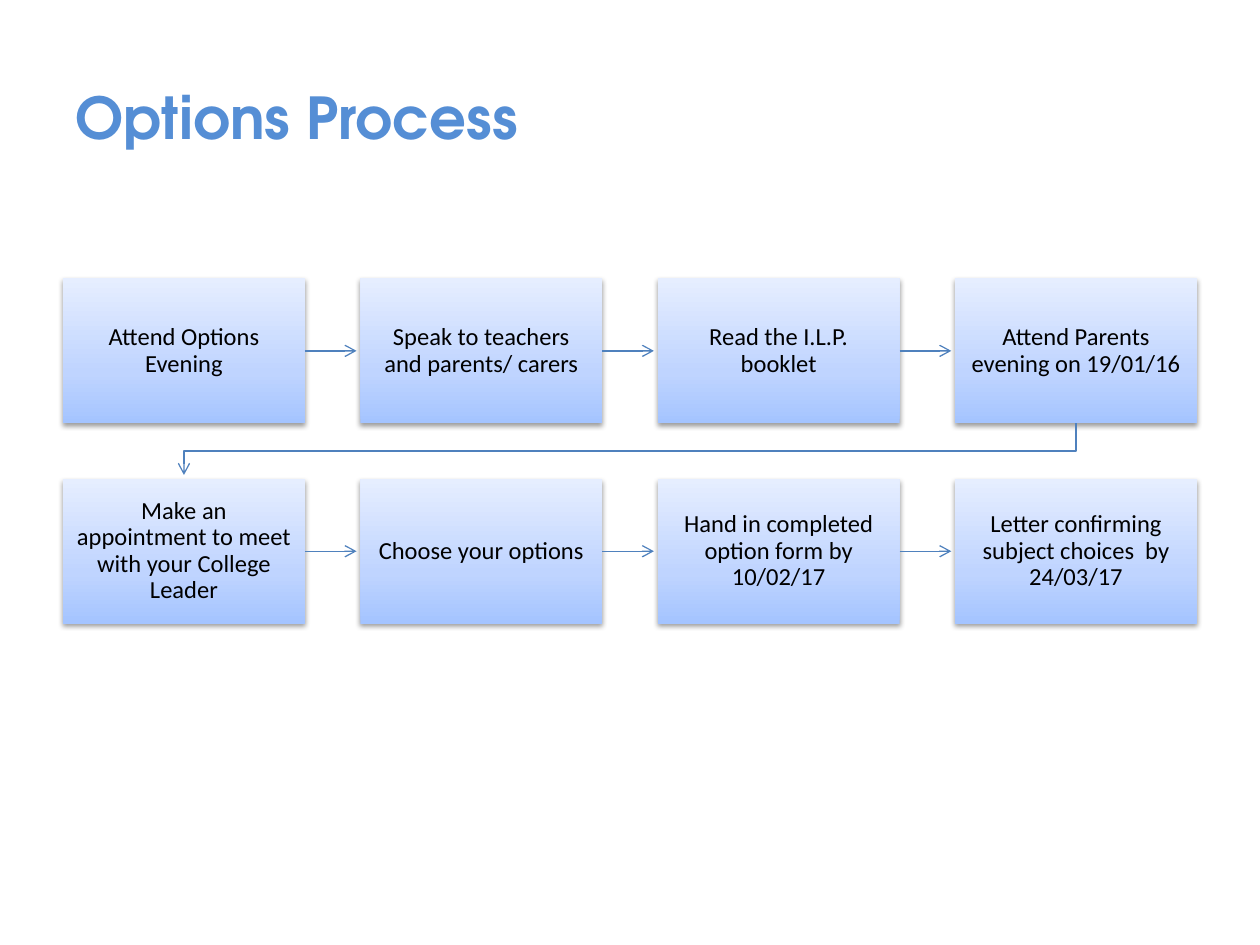
from copy import deepcopy
from typing import NamedTuple

from lxml.etree import SubElement
from pptx import Presentation
from pptx.dml.color import RGBColor
from pptx.enum.shapes import MSO_CONNECTOR as CONN, MSO_SHAPE as SHAPE
from pptx.enum.text import MSO_ANCHOR as ANCHOR, PP_ALIGN as ALIGN
from pptx.oxml.ns import qn
from pptx.util import Inches, Pt

COLORS = {
    "title": "558ED5", "text": "000000", "line": "4F81BD", "shadow": "000000",
    "bottom": "A4C4FF", "middle": "BFD4FF", "top": "E6EEFF",
}
GRADIENT = ((0, "bottom"), (0.35, "middle"), (1, "top"))
COLS = 4
LEFT, TOP = 0.5, 2.21
BOX_W, BOX_H = 1.92, 1.15
PITCH_X, PITCH_Y = 2.36, 1.59
ARROW_GAP = 0.03
INSET = 0.11


class Step(NamedTuple):
    text: str
    row: int
    col: int

    @property
    def x(self) -> float:
        return LEFT + self.col * PITCH_X

    @property
    def y(self) -> float:
        return TOP + self.row * PITCH_Y


LABELS = (
    "Attend Options Evening",
    "Speak to teachers and parents/ carers",
    "Read the I.L.P. booklet",
    "Attend Parents evening on 19/01/16",
    "Make an appointment to meet with your College Leader",
    "Choose your options",
    "Hand in completed option form by 10/02/17",
    "Letter confirming subject choices  by 24/03/17",
)
STEPS = [Step(text, *divmod(i, COLS)) for i, text in enumerate(LABELS)]


def rgb(name: str) -> RGBColor:
    return RGBColor.from_string(COLORS[name])


def add_title(s, text: str) -> None:
    tf = s.shapes.add_textbox(Inches(0.5), Inches(0.3), Inches(9), Inches(1.25)).text_frame
    tf.word_wrap = True
    tf.vertical_anchor = ANCHOR.MIDDLE
    p = tf.paragraphs[0]
    p.text = text
    p.font.name, p.font.size, p.font.bold = "TeX Gyre Adventor", Pt(33), True
    p.font.color.rgb = rgb("title")


def fill_gradient(sp) -> None:
    sp.fill.gradient()
    sp.fill.gradient_angle = 90
    stop_list = sp._element.spPr.find(qn("a:gradFill")).find(qn("a:gsLst"))
    stop_list.append(deepcopy(stop_list[0]))
    for stop, (position, color) in zip(sp.fill.gradient_stops, GRADIENT):
        stop.position = position
        stop.color.rgb = rgb(color)


def add_shadow(sp) -> None:
    sp.shadow.inherit = False
    effects = sp._element.spPr.find(qn("a:effectLst"))
    shadow = SubElement(effects, qn("a:outerShdw"), blurRad=str(Pt(3.1)),
                        dist=str(Pt(1.6)), dir="5400000", rotWithShape="0")
    color = SubElement(shadow, qn("a:srgbClr"), val=COLORS["shadow"])
    SubElement(color, qn("a:alpha"), val="38000")


def add_box(s, step: Step):
    sp = s.shapes.add_shape(SHAPE.RECTANGLE, Inches(step.x), Inches(step.y),
                            Inches(BOX_W), Inches(BOX_H))
    fill_gradient(sp)
    sp.line.fill.background()
    add_shadow(sp)
    tf = sp.text_frame
    tf.word_wrap = True
    tf.vertical_anchor = ANCHOR.MIDDLE
    tf.margin_left = tf.margin_right = tf.margin_top = tf.margin_bottom = Inches(INSET)
    p = tf.paragraphs[0]
    p.text = step.text
    p.alignment, p.line_spacing = ALIGN.CENTER, 0.9
    p.font.name, p.font.size = "Calibri", Pt(14)
    p.font.color.rgb = rgb("text")
    return sp


def style_arrow(sp) -> None:
    sp.line.color.rgb = rgb("line")
    sp.line.width = Pt(0.75)
    spPr = sp._element.spPr
    SubElement(spPr.find(qn("a:ln")), qn("a:tailEnd"), type="arrow")
    SubElement(spPr, qn("a:effectLst"))


def add_straight_arrow(s, start: Step, end: Step, box) -> None:
    y = Inches(start.y + BOX_H / 2)
    sp = s.shapes.add_connector(CONN.STRAIGHT, Inches(start.x + BOX_W), y,
                                Inches(end.x - ARROW_GAP), y)
    sp.begin_connect(box, 3)
    style_arrow(sp)


def add_return_arrow(s, start: Step, end: Step) -> None:
    x1, x2 = (Inches(step.x + BOX_W / 2) for step in (start, end))
    y1, y2 = Inches(start.y + BOX_H), Inches(end.y - ARROW_GAP)
    middle = Inches((start.y + BOX_H + end.y) / 2)
    path = s.shapes.build_freeform(x1, y1)
    path.add_line_segments([(x1, middle), (x2, middle), (x2, y2)], close=False)
    sp = path.convert_to_shape()
    sp.fill.background()
    style_arrow(sp)


def main() -> None:
    prs = Presentation()
    prs.slide_width, prs.slide_height = Inches(10), Inches(7.5)
    s = prs.slides.add_slide(prs.slide_layouts[6])
    add_title(s, "Options Process")
    boxes = [add_box(s, step) for step in STEPS]
    for start, end, box in zip(STEPS, STEPS[1:], boxes):
        if start.row == end.row:
            add_straight_arrow(s, start, end, box)
        else:
            add_return_arrow(s, start, end)
    prs.save("out.pptx")


if __name__ == "__main__":
    main()
